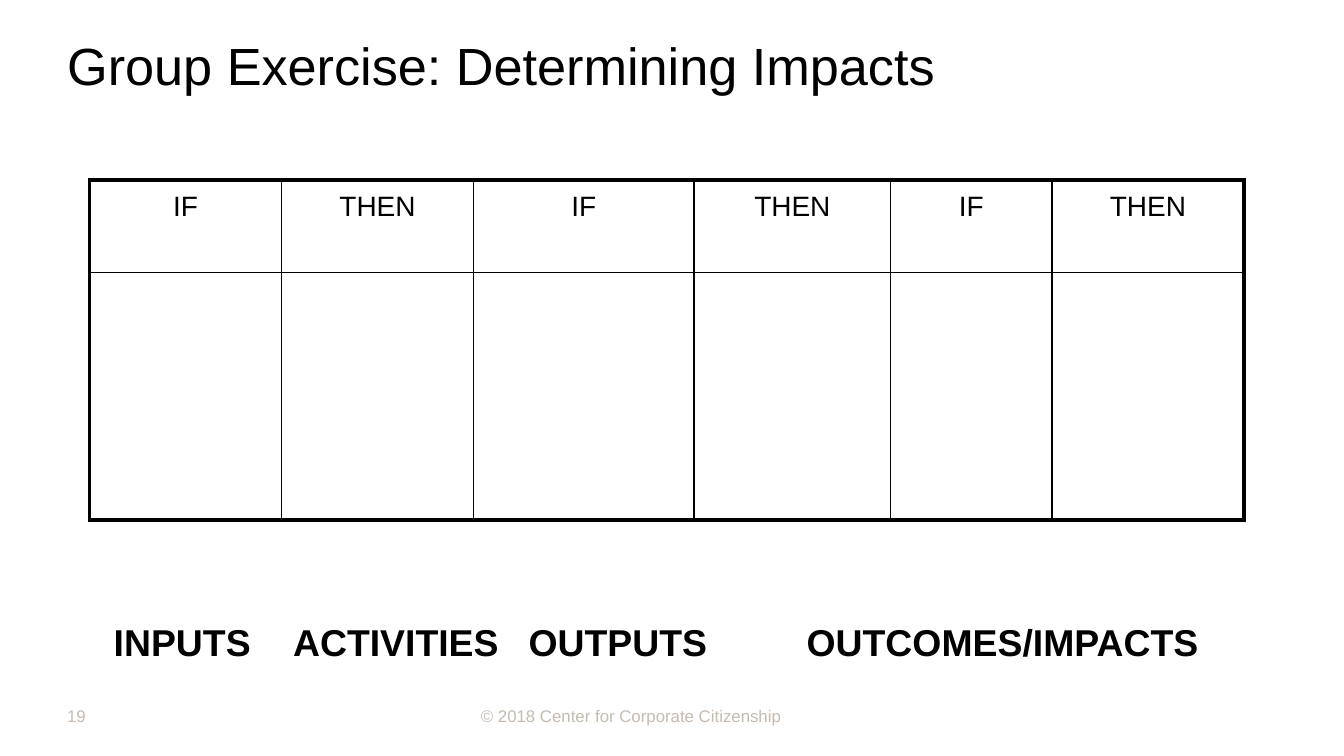
import pptx
import pptx.dml.color
import pptx.enum.text
import pptx.oxml
import pptx.oxml.ns
import pptx.util
from pptx.util import Cm

FONT = "Arial"
BLACK = "000000"
FOOTER_COLOUR = "C6BBAE"
THIN, THICK = 1, 2.25

COLUMN_WIDTHS = [3.63, 3.63, 4.17, 3.71, 3.05, 3.63]
ROW_HEIGHTS = [1.75, 4.68]
HEADINGS = ["IF", "THEN"] * 3

LEFT = pptx.enum.text.PP_ALIGN.LEFT
CENTER = pptx.enum.text.PP_ALIGN.CENTER
MIDDLE = pptx.enum.text.MSO_ANCHOR.MIDDLE

# text, left, width, alignment
STAGES = [
    ("INPUTS", 1.9, 3.18, LEFT),
    ("ACTIVITIES", 5.29, 4.45, LEFT),
    ("OUTPUTS", 9.74, 4.65, LEFT),
    ("OUTCOMES/IMPACTS", 14.82, 8.26, CENTER),
]


def colour(hex_string):
    return pptx.dml.color.RGBColor.from_string(hex_string)


def write(text_frame, text, size, hex_string=BLACK, bold=False, alignment=LEFT):
    text_frame.text = text
    paragraph = text_frame.paragraphs[0]
    paragraph.alignment = alignment
    for run in paragraph.runs:
        run.font.name = FONT
        run.font.size = pptx.util.Pt(size)
        run.font.bold = bold
        run.font.color.rgb = colour(hex_string)
    return paragraph


def remove_insets(text_frame):
    text_frame.margin_left = text_frame.margin_right = 0
    text_frame.margin_top = text_frame.margin_bottom = 0
    text_frame.vertical_anchor = MIDDLE


def add_text_box(slide, left, top, width, height):
    box = slide.shapes.add_textbox(Cm(left), Cm(top), Cm(width), Cm(height))
    box.text_frame.word_wrap = True
    return box.text_frame


def place_title(slide, left, top, width, height):
    title = slide.shapes.title
    title.left, title.top = Cm(left), Cm(top)
    title.width, title.height = Cm(width), Cm(height)
    remove_insets(title.text_frame)
    write(title.text_frame, "Group Exercise: Determining Impacts", 28)


def set_borders(cell, widths):
    """Draw the left, right, top and bottom lines, with widths in points."""
    properties = cell._tc.get_or_add_tcPr()
    for index, (side, width) in enumerate(zip("LRTB", widths)):
        line = pptx.oxml.parse_xml(
            f'<a:ln{side} {pptx.oxml.ns.nsdecls("a")} w="{pptx.util.Pt(width)}">'
            f'<a:solidFill><a:srgbClr val="{BLACK}"/></a:solidFill></a:ln{side}>'
        )
        properties.insert(index, line)


def add_logic_table(slide, left, top):
    row_count, column_count = len(ROW_HEIGHTS), len(COLUMN_WIDTHS)
    table = slide.shapes.add_table(
        row_count, column_count, Cm(left), Cm(top),
        Cm(sum(COLUMN_WIDTHS)), Cm(sum(ROW_HEIGHTS)),
    ).table
    table.first_row = table.horz_banding = False
    for column, width in zip(table.columns, COLUMN_WIDTHS):
        column.width = Cm(width)
    for row, height in zip(table.rows, ROW_HEIGHTS):
        row.height = Cm(height)

    for row in range(row_count):
        for column in range(column_count):
            cell = table.cell(row, column)
            cell.fill.background()
            outer_sides = (column == 0, column == column_count - 1,
                           row == 0, row == row_count - 1)
            set_borders(cell, [THICK if outer else THIN for outer in outer_sides])

    for column, heading in enumerate(HEADINGS):
        cell = table.cell(0, column)
        cell.margin_top = cell.margin_bottom = Cm(0.1)
        paragraph = write(cell.text_frame, heading, 15, alignment=CENTER)
        paragraph.line_spacing = 1.2


def add_stage_labels(slide, top, height):
    for text, left, width, alignment in STAGES:
        text_frame = add_text_box(slide, left, top, width, height)
        write(text_frame, text, 20, bold=True, alignment=alignment)


def add_footer(slide, top, height):
    for text, left, width in [
        ("19", 1.27, 5.92),
        ("© 2018 Center for Corporate Citizenship", 9.09, 5.79),
    ]:
        text_frame = add_text_box(slide, left, top, width, height)
        remove_insets(text_frame)
        write(text_frame, text, 9, FOOTER_COLOUR)


def main():
    presentation = pptx.Presentation()
    presentation.slide_width, presentation.slide_height = Cm(25.4), Cm(14.29)
    title_only = presentation.slide_layouts.get_by_name("Title Only")
    slide = presentation.slides.add_slide(title_only)
    place_title(slide, 1.27, 0.2, 24.13, 2.06)
    add_logic_table(slide, 1.69, 3.4)
    add_stage_labels(slide, 11.58, 1.12)
    add_footer(slide, 13.16, 0.76)
    presentation.save("out.pptx")


if __name__ == "__main__":
    main()
